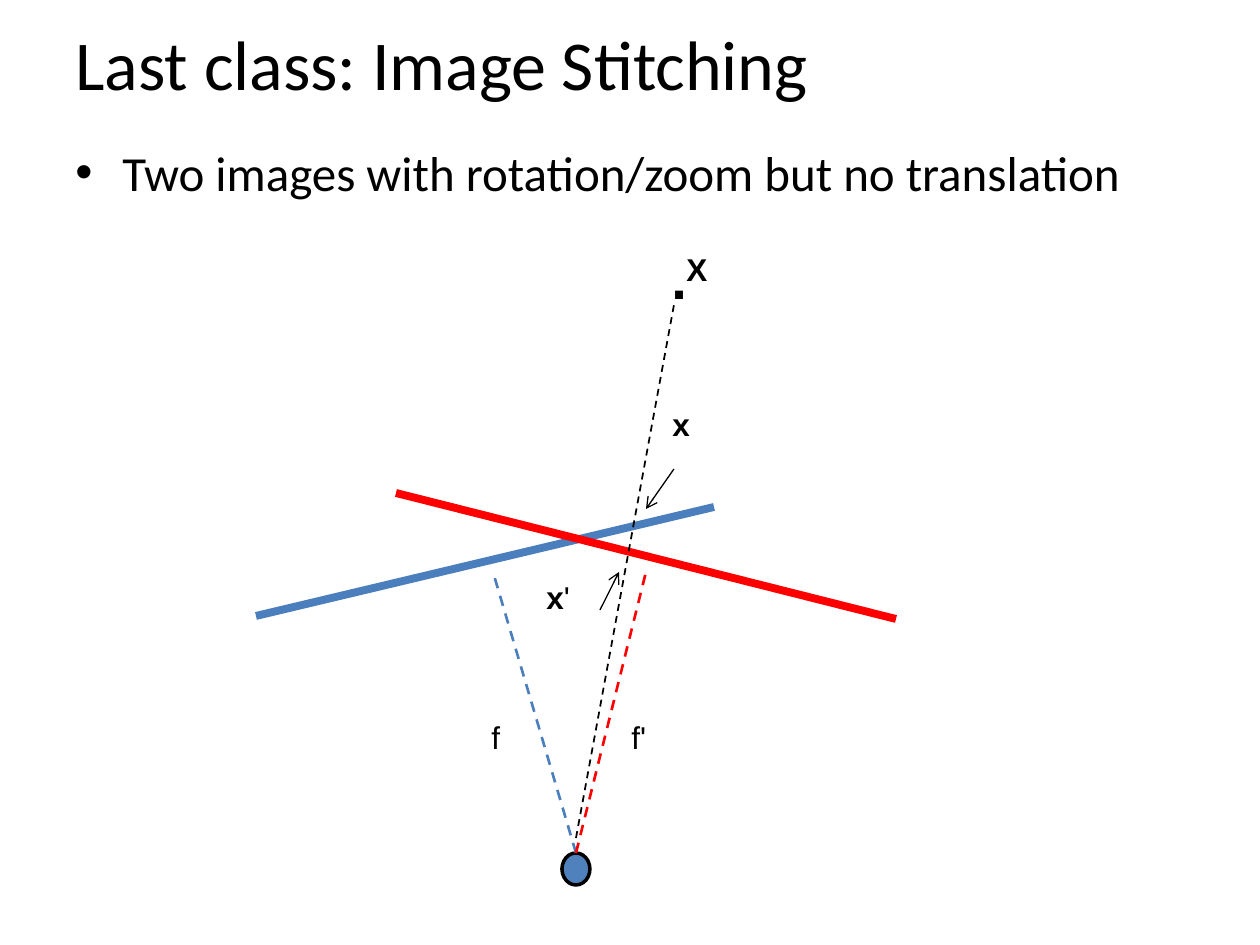
"""Build the image stitching slide: two image planes seen from one camera centre."""
from dataclasses import dataclass

import lxml.etree
import pptx
import pptx.dml.color
import pptx.enum.dml
import pptx.enum.shapes
import pptx.enum.text
import pptx.oxml.ns
import pptx.util

EMU_PER_PX = 914400 / 126
BLACK, RED, BLUE, CAMERA_BLUE = "000000", "FF0000", "4B7EBC", "4F81BD"
CAMERA_TOP = (576, 853)


@dataclass
class Line:
    start: tuple[int, int]
    end: tuple[int, int]
    color: str
    width: float
    dashed: bool = False
    arrow: bool = False


@dataclass
class Label:
    box: tuple[int, int, int, int]
    runs: list[tuple[str, bool]]
    size: int = 18
    font: str = "Arial"
    wrap: bool = False
    anchor: str = "TOP"


def px(length: int) -> int:
    return round(length * EMU_PER_PX)


def rgb(color: str) -> pptx.dml.color.RGBColor:
    return pptx.dml.color.RGBColor.from_string(color)


def add_child(parent, tag: str, **attributes: str) -> None:
    lxml.etree.SubElement(parent, pptx.oxml.ns.qn(tag), attributes)


def draw_line(page, line: Line) -> None:
    connector = page.shapes.add_connector(
        pptx.enum.shapes.MSO_CONNECTOR.STRAIGHT, *map(px, line.start + line.end)
    )
    connector.line.color.rgb = rgb(line.color)
    connector.line.width = pptx.util.Pt(line.width)
    if line.dashed:
        connector.line.dash_style = pptx.enum.dml.MSO_LINE.DASH
    if line.arrow:
        add_child(connector.get_or_add_ln(), "a:tailEnd", type="arrow")
    add_child(connector._element.spPr, "a:effectLst")


def draw_label(page, label: Label):
    box = page.shapes.add_textbox(*map(px, label.box))
    frame = box.text_frame
    frame.word_wrap = label.wrap
    frame.vertical_anchor = pptx.enum.text.MSO_ANCHOR[label.anchor]
    para = frame.paragraphs[0]
    for text, bold in label.runs:
        span = para.add_run()
        span.text = text
        span.font.name = label.font
        span.font.size = pptx.util.Pt(label.size)
        span.font.bold = bold
        span.font.color.rgb = rgb(BLACK)
    return para


def add_bullet(para, indent: int) -> None:
    properties = para._p.get_or_add_pPr()
    properties.set("marL", str(px(indent)))
    properties.set("indent", str(-px(indent)))
    add_child(properties, "a:buFont", typeface="Arial")
    add_child(properties, "a:buChar", char="•")


def draw_camera(page) -> None:
    camera = page.shapes.add_shape(
        pptx.enum.shapes.MSO_SHAPE.OVAL, *map(px, (562, 853, 28, 32))
    )
    camera.shadow.inherit = False
    camera.fill.solid()
    camera.fill.fore_color.rgb = rgb(CAMERA_BLUE)
    camera.line.color.rgb = rgb(BLACK)
    camera.line.width = pptx.util.Pt(2)


IMAGE_PLANES = [
    Line((256, 616), (714, 507), BLUE, 4.5),
    Line((396, 493), (896, 619), RED, 4.5),
]
RAYS_AND_POINTERS = [
    Line(CAMERA_TOP, (493, 572), BLUE, 1.5, dashed=True),
    Line(CAMERA_TOP, (646, 572), RED, 1.5, dashed=True),
    Line((576, 838), (674, 305), BLACK, 1, dashed=True),
    Line((600, 610), (619, 572), BLACK, 0.75, arrow=True),
    Line((674, 469), (646, 509), BLACK, 0.75, arrow=True),
]
TITLE = Label((63, 0, 1134, 126), [("Last class: Image Stitching", False)],
              40, "Calibri", True, "MIDDLE")
BODY = Label((63, 136, 1134, 708),
             [("Two images with rotation/zoom but no translation", False)],
             28, "Calibri", True)
DIAGRAM_LABELS = [
    Label((479, 712, 45, 76), [("f", False)]),
    Label((619, 712, 53, 76), [("f'", False)]),
    Label((659, 237, 54, 120), [(".", True)], 32),
    Label((660, 399, 57, 76), [("x", True)]),
    Label((534, 572, 66, 76), [("x", True), ("'", False)]),
    Label((674, 244, 62, 76), [("X", True)]),
]


def main() -> None:
    deck = pptx.Presentation()
    deck.slide_width, deck.slide_height = px(1260), px(945)
    page = deck.slides.add_slide(deck.slide_layouts[6])
    draw_label(page, TITLE)
    add_bullet(draw_label(page, BODY), 47)
    for plane in IMAGE_PLANES:
        draw_line(page, plane)
    draw_camera(page)
    for line in RAYS_AND_POINTERS:
        draw_line(page, line)
    for label in DIAGRAM_LABELS:
        draw_label(page, label)
    deck.save("out.pptx")


if __name__ == "__main__":
    main()
